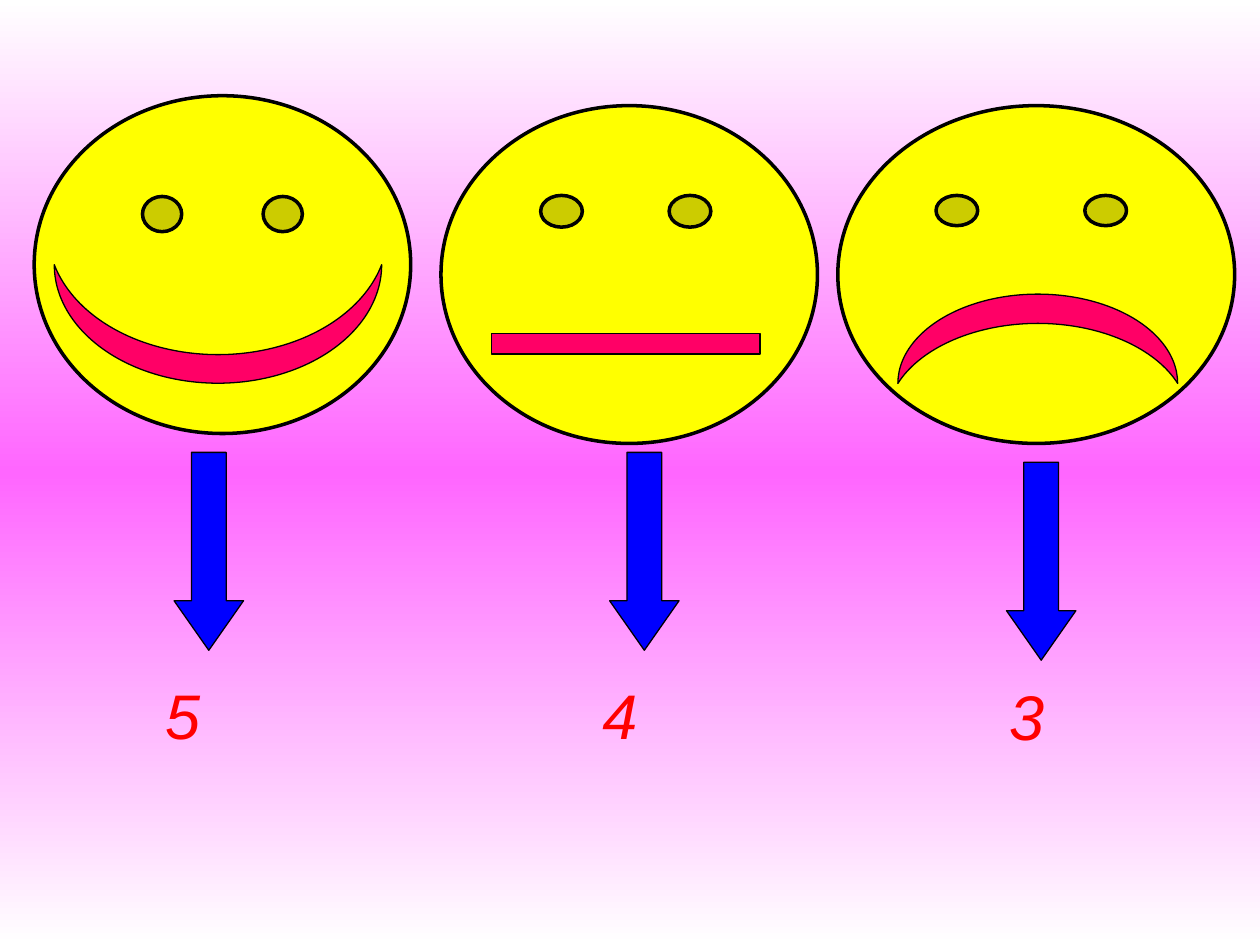
from lxml import etree
from pptx import Presentation
from pptx.dml.color import RGBColor
from pptx.enum.shapes import MSO_SHAPE
from pptx.enum.text import MSO_ANCHOR, PP_ALIGN
from pptx.oxml.ns import qn
from pptx.util import Cm, Pt

SMILEY, OVAL, MOON = MSO_SHAPE.SMILEY_FACE, MSO_SHAPE.OVAL, MSO_SHAPE.MOON
BAR, DOWN_ARROW = MSO_SHAPE.RECTANGLE, MSO_SHAPE.DOWN_ARROW

YELLOW = RGBColor(0xFF, 0xFF, 0x00)
OLIVE = RGBColor(0xCC, 0xCC, 0x00)
PINK = RGBColor(0xFF, 0x00, 0x66)
BLUE = RGBColor(0x00, 0x00, 0xFF)
RED = RGBColor(0xFF, 0x00, 0x00)
BLACK = RGBColor(0x00, 0x00, 0x00)
WHITE = RGBColor(0xFF, 0xFF, 0xFF)
MAGENTA = RGBColor(0xFF, 0x66, 0xFF)

BACKGROUND = [(0, WHITE), (50, MAGENTA), (100, WHITE)]
EYE_TOP, EYE_WIDTH = 3.94, 0.84
ARROW_SIZE = (1.4, 3.99)
GRADE_SIZE = (2.79, 3.61)

FACES = [
    {"head": (SMILEY, (0.69, 1.93, 7.59, 6.81), [0.047]),
     "eyes": [], "eye_height": 0,
     "mouth": (MOON, (3.2, 3.23, 2.39, 6.6), [0.241], 270),
     "arrow": (3.51, 9.12), "grade": ("5", 2.29, 13.51)},
    {"head": (OVAL, (8.89, 2.13, 7.59, 6.81), []),
     "eyes": [10.9, 13.49], "eye_height": 0.64,
     "mouth": (BAR, (9.91, 6.73, 5.41, 0.41), [], 0),
     "arrow": (12.29, 9.12), "grade": ("4", 11.1, 13.51)},
    {"head": (OVAL, (16.89, 2.13, 8, 6.81), []),
     "eyes": [18.87, 21.87], "eye_height": 0.61,
     "mouth": (MOON, (20.02, 4.01, 1.8, 5.64), [0.328], 90),
     "arrow": (20.29, 9.32), "grade": ("3", 19.3, 13.54)},
]


def paint_background(page):
    fill = page.background.fill
    fill.gradient()
    fill.gradient_angle = 270
    stops = page.element.find(".//" + qn("a:gsLst"))
    for stop in list(stops):
        stops.remove(stop)
    for percent, color in BACKGROUND:
        stop = etree.SubElement(stops, qn("a:gs"), pos=str(percent * 1000))
        etree.SubElement(stop, qn("a:srgbClr"), val=str(color))


def add_part(page, kind, place, color, line_width, adjustments=(), rotation=0):
    shape = page.shapes.add_shape(kind, *map(Cm, place))
    shape.shadow.inherit = False
    shape.fill.solid()
    shape.fill.fore_color.rgb = color
    shape.line.color.rgb = BLACK
    shape.line.width = Pt(line_width)
    shape.rotation = rotation
    for index, value in enumerate(adjustments):
        shape.adjustments[index] = value


def add_grade(page, text, left, top):
    box = page.shapes.add_textbox(*map(Cm, (left, top, *GRADE_SIZE)))
    frame = box.text_frame
    frame.word_wrap = False
    frame.vertical_anchor = MSO_ANCHOR.TOP
    para = frame.paragraphs[0]
    para.alignment = PP_ALIGN.CENTER
    span = para.add_run()
    span.text = text
    font = span.font
    font.name, font.size, font.italic = "Arial", Pt(36), True
    font.color.rgb = RED
    outline = etree.Element(qn("a:ln"), w=str(Pt(0.75)))
    solid = etree.SubElement(outline, qn("a:solidFill"))
    etree.SubElement(solid, qn("a:srgbClr"), val=str(BLACK))
    span._r.get_or_add_rPr().insert(0, outline)


def add_face(page, face):
    kind, place, adjustments = face["head"]
    add_part(page, kind, place, YELLOW, 2, adjustments)
    for left in face["eyes"]:
        place = (left, EYE_TOP, EYE_WIDTH, face["eye_height"])
        add_part(page, OVAL, place, OLIVE, 2)
    kind, place, adjustments, rotation = face["mouth"]
    add_part(page, kind, place, PINK, 0.75, adjustments, rotation)
    add_part(page, DOWN_ARROW, face["arrow"] + ARROW_SIZE, BLUE, 0.75, [0.5, 0.713])
    add_grade(page, *face["grade"])


def main():
    deck = Presentation()
    deck.slide_width, deck.slide_height = Cm(25.4), Cm(19.05)
    page = deck.slides.add_slide(deck.slide_layouts[6])
    paint_background(page)
    for face in FACES:
        add_face(page, face)
    deck.save("out.pptx")


if __name__ == "__main__":
    main()
